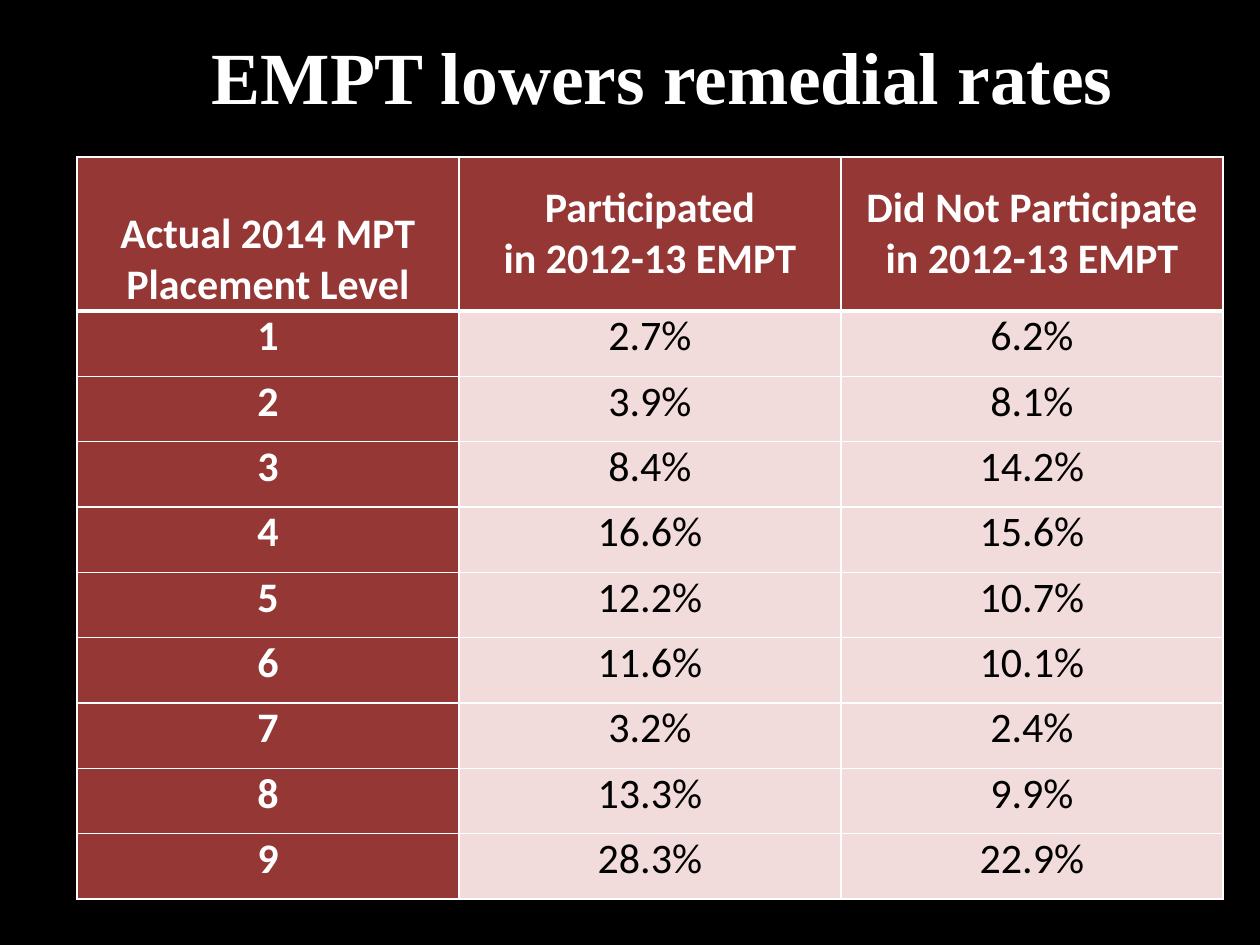
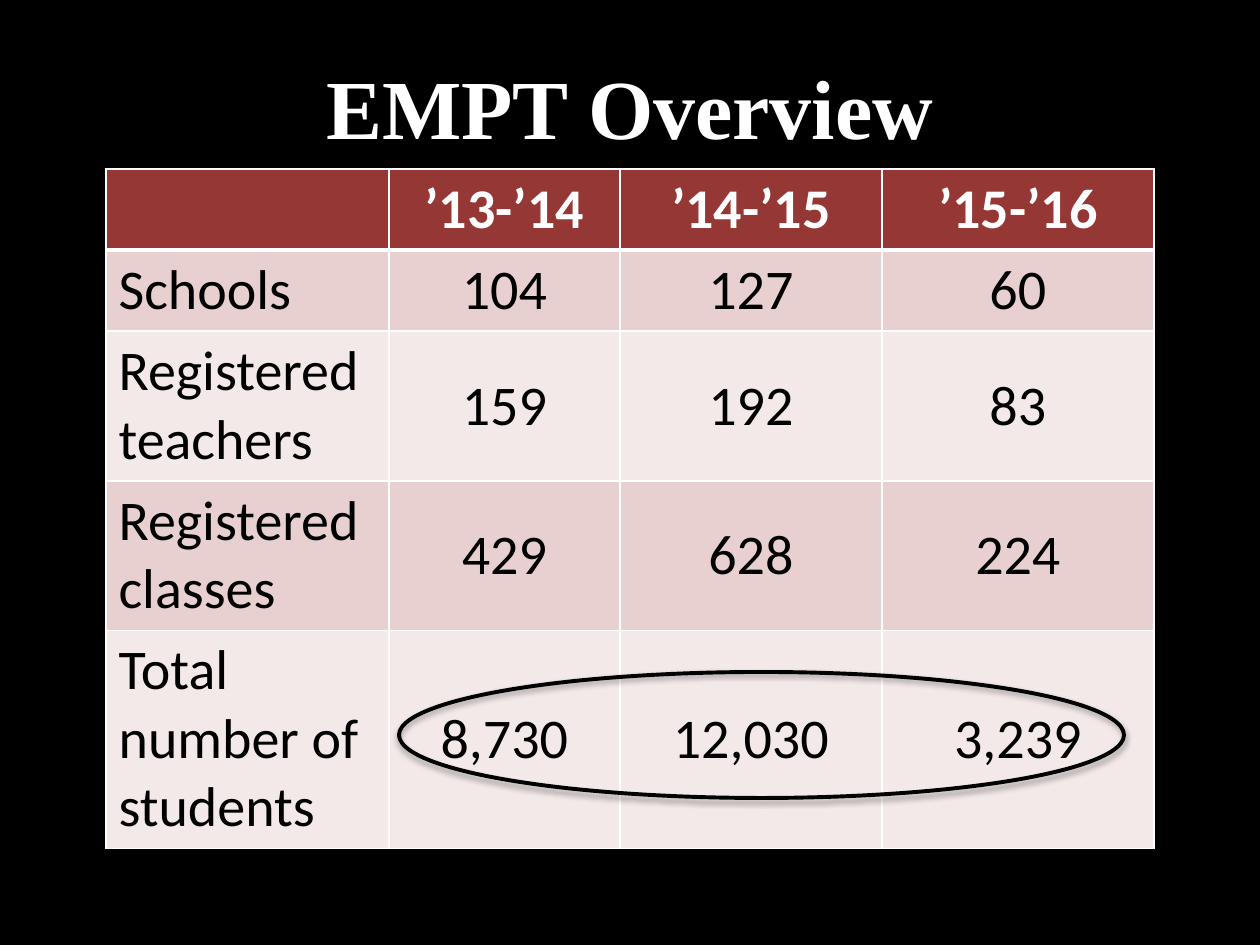
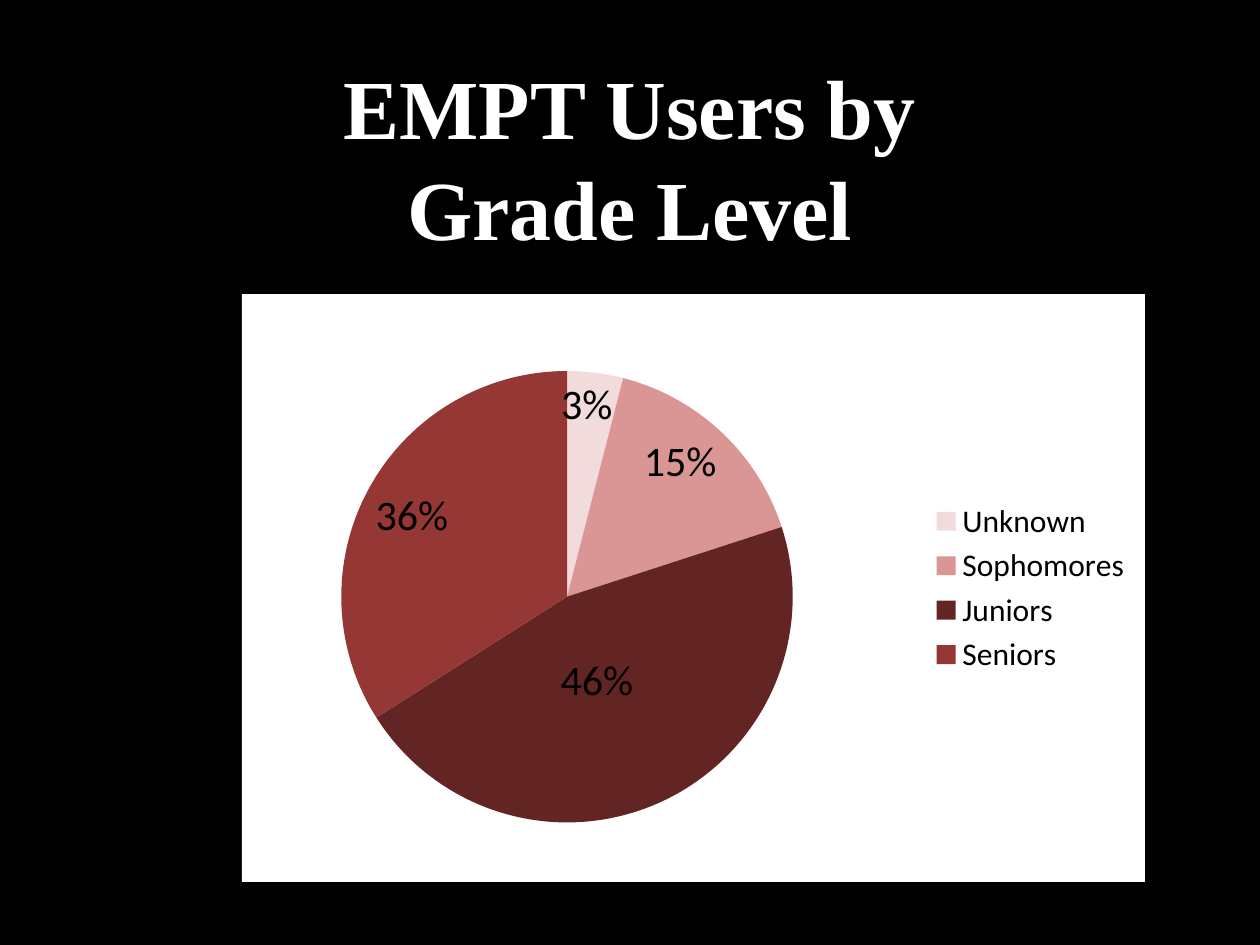
from lxml import etree
from pptx import Presentation
from pptx.chart.data import CategoryChartData
from pptx.dml.color import RGBColor
from pptx.enum.chart import XL_CHART_TYPE, XL_LABEL_POSITION, XL_LEGEND_POSITION
from pptx.enum.shapes import MSO_SHAPE
from pptx.enum.text import MSO_ANCHOR, MSO_AUTO_SIZE, PP_ALIGN
from pptx.oxml import parse_xml
from pptx.oxml.ns import nsdecls, qn
from pptx.util import Emu, Pt

PIE = XL_CHART_TYPE.PIE
INSIDE_END, LABEL_CENTER = XL_LABEL_POSITION.INSIDE_END, XL_LABEL_POSITION.CENTER
LEGEND_RIGHT = XL_LEGEND_POSITION.RIGHT
OVAL = MSO_SHAPE.OVAL
TOP, MIDDLE, BOTTOM = MSO_ANCHOR.TOP, MSO_ANCHOR.MIDDLE, MSO_ANCHOR.BOTTOM
NO_AUTOSIZE = MSO_AUTO_SIZE.NONE
LEFT, CENTER = PP_ALIGN.LEFT, PP_ALIGN.CENTER

SCALE = 914400 / 126
TITLE_FONT, BODY_FONT = "Times New Roman", "Calibri"
COLORS = {
    "black": "000000", "white": "FFFFFF", "red": "953735", "dark_red": "632523",
    "rose": "D99694", "pink": "F2DCDB", "band_dark": "E8D0D0", "band_light": "F4E9E9",
}


def px(value):
    return Emu(round(value * SCALE))


def rgb(name):
    return RGBColor.from_string(COLORS[name])


def paint(fill, color):
    fill.solid()
    fill.fore_color.rgb = rgb(color)


def write(tf, text, size=24, color="black", bold=False, font=BODY_FONT, align=CENTER):
    """Put each line of text in its own paragraph, in one format."""
    for i, line in enumerate(text.split("\n")):
        p = tf.add_paragraph() if i else tf.paragraphs[0]
        p.alignment = align
        r = p.add_run()
        r.text = line
        r.font.size, r.font.bold, r.font.name = Pt(size), bold, font
        r.font.color.rgb = rgb(color)


def add_slide(prs, title, box, size=48):
    s = prs.slides.add_slide(prs.slide_layouts[5])
    paint(s.background.fill, "black")
    sp = s.shapes.title
    sp.left, sp.top, sp.width, sp.height = map(px, box)
    tf = sp.text_frame
    tf.word_wrap, tf.auto_size, tf.vertical_anchor = True, NO_AUTOSIZE, TOP
    write(tf, title, size=size, color="white", bold=True, font=TITLE_FONT)
    return s


def set_borders(cell, **widths):
    tc_pr = cell._tc.get_or_add_tcPr()
    for side in "LRTB":
        width = Pt(widths.get(side, 1))
        tc_pr.append(parse_xml(
            f'<a:ln{side} {nsdecls("a")} w="{width}"><a:solidFill>'
            f'<a:srgbClr val="{COLORS["white"]}"/></a:solidFill></a:ln{side}>'))


def add_table(s, left, top, widths, heights):
    frame = s.shapes.add_table(len(heights), len(widths), px(left), px(top),
                               px(sum(widths)), px(sum(heights)))
    table = frame.table
    table.horz_banding = False
    for col, width in zip(table.columns, widths):
        col.width = px(width)
    for row, height in zip(table.rows, heights):
        row.height = px(height)
    return table


def fill_cell(table, row, col, text, fill, anchor=MIDDLE, margins=None, **fmt):
    cell = table.cell(row, col)
    # The rule under the header row is thicker
    set_borders(cell, **({"B": 3} if row == 0 else {"T": 3} if row == 1 else {}))
    paint(cell.fill, fill)
    cell.vertical_anchor = anchor
    if margins:
        cell.margin_left = cell.margin_right = px(margins[0])
        cell.margin_top = cell.margin_bottom = px(margins[1])
    if text:
        write(cell.text_frame, text, **fmt)


def add_rates_table(s):
    rows = [
        ("Actual 2014 MPT\nPlacement Level", "Participated\nin 2012-13 EMPT",
         "Did Not Participate\nin 2012-13 EMPT"),
        ("1", "2.7%", "6.2%"), ("2", "3.9%", "8.1%"), ("3", "8.4%", "14.2%"),
        ("4", "16.6%", "15.6%"), ("5", "12.2%", "10.7%"), ("6", "11.6%", "10.1%"),
        ("7", "3.2%", "2.4%"), ("8", "13.3%", "9.9%"), ("9", "28.3%", "22.9%"),
    ]
    levels = len(rows) - 1
    table = add_table(s, 77, 157, [382] * 3, [154] + [588 / levels] * levels)
    for i, row in enumerate(rows):
        for j, text in enumerate(row):
            head = i == 0 or j == 0
            anchor = TOP if i else MIDDLE if j else BOTTOM
            fill_cell(table, i, j, text, "red" if head else "pink", anchor, (9, 0),
                      color="white" if head else "black", bold=head)


def add_overview_table(s):
    rows = [
        ("", "’13-’14", "’14-’15", "’15-’16"),
        ("Schools", "104", "127", "60"),
        ("Registered teachers", "159", "192", "83"),
        ("Registered classes", "429", "628", "224"),
        ("Total number of students", "8,730", "12,030", "3,239"),
    ]
    table = add_table(s, 106, 169, [283, 231, 262, 272], [79, 80, 147, 147, 214])
    for i, row in enumerate(rows):
        fill = "red" if i == 0 else "band_dark" if i % 2 else "band_light"
        for j, text in enumerate(row):
            fill_cell(table, i, j, text, fill, MIDDLE if j else TOP, size=32,
                      color="black" if i else "white", bold=i == 0,
                      align=CENTER if j else LEFT)


def add_highlight(s, left, top, width, height):
    sp = s.shapes.add_shape(OVAL, px(left), px(top), px(width), px(height))
    sp.fill.background()
    sp.line.color.rgb = rgb("black")
    sp.line.width = Pt(2.25)
    sp.shadow.inherit = False
    effects = sp._element.spPr.find(qn("a:effectLst"))
    effects.append(parse_xml(
        f'<a:outerShdw {nsdecls("a")} blurRad="{Pt(3.1)}" dist="{Pt(1.8)}" dir="5400000" '
        f'rotWithShape="0"><a:srgbClr val="{COLORS["black"]}"><a:alpha val="35000"/>'
        '</a:srgbClr></a:outerShdw>'))


def manual_layout(x, y, w=None, h=None):
    """Place the inner plot area, or shift a label when no size is given."""
    layout = etree.Element(qn("c:layout"))
    manual = etree.SubElement(layout, qn("c:manualLayout"))
    values = [("x", x), ("y", y)]
    if w:
        values = [("layoutTarget", "inner"), ("xMode", "edge"), ("yMode", "edge"),
                  *values, ("w", w), ("h", h)]
    for tag, value in values:
        etree.SubElement(manual, qn(f"c:{tag}")).set("val", str(value))
    return layout


def add_grade_chart(s):
    # Grade, value, label, slice colour, label position and shift
    slices = [
        ("Unknown", 4, "3%", "pink", INSIDE_END, (0.02, 0)),
        ("Sophomores", 16, "15%", "rose", INSIDE_END, (0, 0)),
        ("Juniors", 46, "46%", "dark_red", LABEL_CENTER, (-0.02, -0.03)),
        ("Seniors", 34, "36%", "red", INSIDE_END, (0, 0)),
    ]
    data = CategoryChartData()
    data.categories = [item[0] for item in slices]
    data.add_series("Series 1", [item[1] for item in slices])
    chart = s.shapes.add_chart(PIE, px(242), px(294), px(903), px(588), data).chart
    chart.has_title = False
    chart.font.size, chart.font.name = Pt(18), BODY_FONT
    chart.font.color.rgb = rgb("black")
    chart.has_legend = True
    chart.legend.position = LEGEND_RIGHT
    chart.legend.include_in_layout = False
    plot = chart.plots[0]
    plot.vary_by_categories = True

    # Slices and their labels
    series = plot.series[0]
    for i, (_, _, text, color, position, shift) in enumerate(slices):
        point = series.points[i]
        paint(point.format.fill, color)
        point.format.line.fill.background()
        label = point.data_label
        write(label.text_frame, text)
        label.position = position
    for d_lbl, item in zip(chart.element.iter(qn("c:dLbl")), slices):
        if any(item[5]):
            d_lbl.find(qn("c:idx")).addnext(manual_layout(*item[5]))

    # Plot position and white background
    area = chart.element.chart.plotArea
    for old in area.findall(qn("c:layout")):
        area.remove(old)
    area.insert(0, manual_layout(0.11, 0.13, 0.5, 0.77))
    chart.element.chart.addnext(parse_xml(
        f'<c:spPr {nsdecls("c", "a")}><a:solidFill><a:srgbClr val="{COLORS["white"]}"/>'
        '</a:solidFill><a:ln><a:noFill/></a:ln></c:spPr>'))


def main():
    prs = Presentation()
    prs.slide_width, prs.slide_height = px(1260), px(945)

    s = add_slide(prs, "EMPT lowers remedial rates", (152, 25, 1021, 102), size=42)
    add_rates_table(s)

    s = add_slide(prs, "EMPT Overview", (210, 49, 840, 115))
    add_overview_table(s)
    add_highlight(s, 399, 672, 725, 126)

    s = add_slide(prs, "EMPT Users by Grade Level", (210, 49, 840, 217))
    add_grade_chart(s)

    prs.save("out.pptx")


if __name__ == "__main__":
    main()
